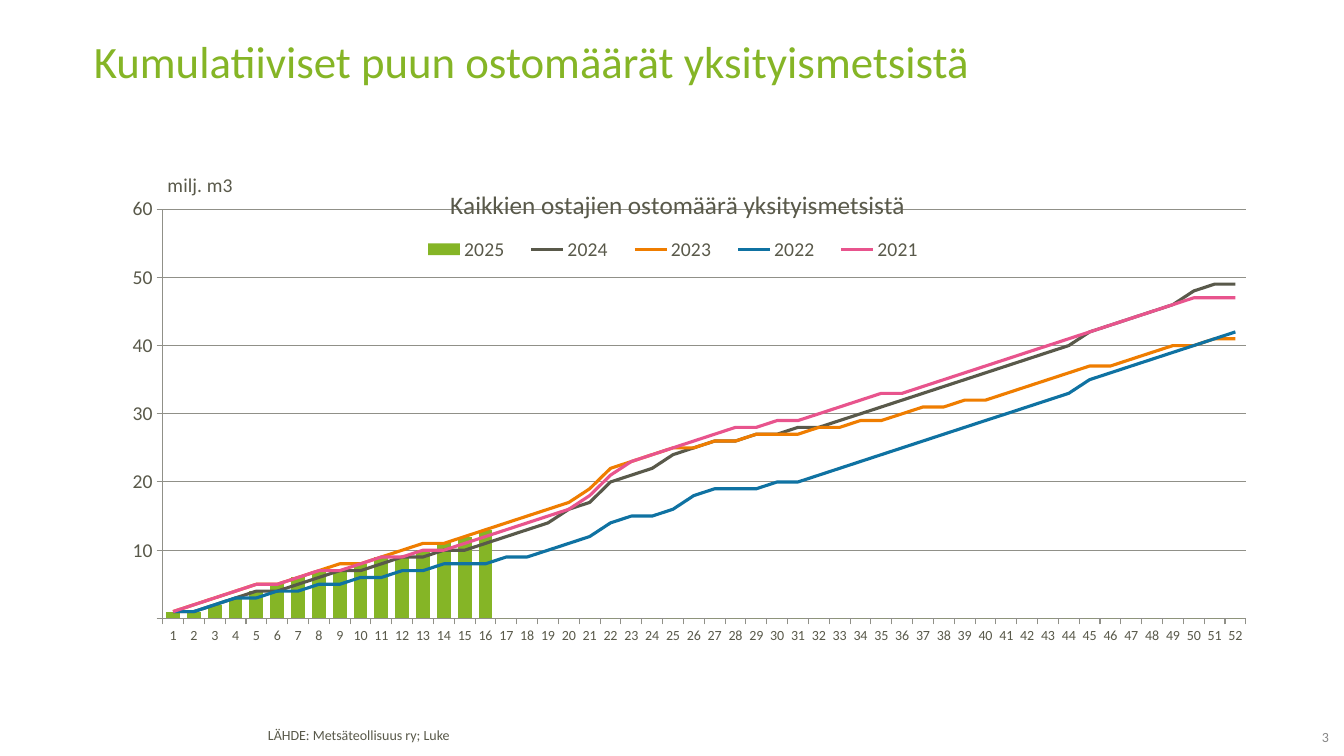
from lxml.etree import SubElement as Sub, Element as Elem
from pptx import Presentation
from pptx.chart.data import CategoryChartData as Data
from pptx.dml.color import RGBColor as RGB
from pptx.enum.chart import XL_CHART_TYPE as Kind, XL_LEGEND_POSITION as Spot
from pptx.enum.chart import XL_MARKER_STYLE as Mark, XL_TICK_MARK as Tick
from pptx.enum.text import MSO_ANCHOR as Anchor, PP_ALIGN as Align
from pptx.oxml.ns import qn
from pptx.util import Inches, Pt

FONT = "Calibri"
GREEN = RGB(0x85, 0xB5, 0x26)
DARK = RGB(0x59, 0x59, 0x4A)
ORANGE = RGB(0xEF, 0x7D, 0x00)
BLUE = RGB(0x0F, 0x72, 0xA2)
PINK = RGB(0xE8, 0x54, 0x8D)
GREY = RGB(0x87, 0x87, 0x87)
RULE = RGB(0x90, 0x90, 0x88)
WIDE, HIGH = Inches(13.33), Inches(7.5)
WEEKS = 52
MILLION = 1000000

YEARS = {
    "2025": (GREEN, [1, 1, 2, 3, 4, 5, 6, 7, 7, 8, 9, 9, 10, 11, 12, 13]),
    "2024": (DARK, [
        1, 1, 2, 3, 4, 4, 5, 6, 7, 7, 8, 9, 9, 10, 10, 11, 12, 13, 14, 16,
        17, 20, 21, 22, 24, 25, 26, 26, 27, 27, 28, 28, 29, 30, 31, 32, 33,
        34, 35, 36, 37, 38, 39, 40, 42, 43, 44, 45, 46, 48, 49, 49]),
    "2023": (ORANGE, [
        1, 2, 3, 4, 5, 5, 6, 7, 8, 8, 9, 10, 11, 11, 12, 13, 14, 15, 16, 17,
        19, 22, 23, 24, 25, 25, 26, 26, 27, 27, 27, 28, 28, 29, 29, 30, 31,
        31, 32, 32, 33, 34, 35, 36, 37, 37, 38, 39, 40, 40, 41, 41]),
    "2022": (BLUE, [
        1, 1, 2, 3, 3, 4, 4, 5, 5, 6, 6, 7, 7, 8, 8, 8, 9, 9, 10, 11,
        12, 14, 15, 15, 16, 18, 19, 19, 19, 20, 20, 21, 22, 23, 24, 25, 26,
        27, 28, 29, 30, 31, 32, 33, 35, 36, 37, 38, 39, 40, 41, 42]),
    "2021": (PINK, [
        1, 2, 3, 4, 5, 5, 6, 7, 7, 8, 9, 9, 10, 10, 11, 12, 13, 14, 15, 16,
        18, 21, 23, 24, 25, 26, 27, 28, 28, 29, 29, 30, 31, 32, 33, 33, 34,
        35, 36, 37, 38, 39, 40, 41, 42, 43, 44, 45, 46, 47, 47, 47]),
}


def area(x, y, w, h):
    return [int(side * part / 100)
            for side, part in zip((WIDE, HIGH, WIDE, HIGH), (x, y, w, h))]


def style(font, size, color):
    font.name, font.size, font.bold = FONT, Pt(size), False
    font.color.rgb = color


def write(frame, text, size, color, space=1.0):
    frame.text = text
    frame.word_wrap = True
    para = frame.paragraphs[0]
    para.line_spacing = space
    style(para.runs[0].font, size, color)
    return para


def add_title(slide, text):
    title = slide.shapes.title
    title.left, title.top, title.width, title.height = area(6.23, 5.2, 87.7, 13.07)
    title.text_frame.vertical_anchor = Anchor.TOP
    write(title.text_frame, text, 32, GREEN, 0.8).alignment = Align.LEFT


def add_note(slide, text, box, color, space=1.0):
    frame = slide.shapes.add_textbox(*area(*box)).text_frame
    return frame, write(frame, text, 10, color, space)


def place(node, index, x, y, w=None, h=None, inner=False):
    for old in node.findall(qn("c:layout")):
        node.remove(old)
    layout = Elem(qn("c:layout"))
    node.insert(index, layout)
    manual = Sub(layout, qn("c:manualLayout"))
    parts = [("layoutTarget", "inner")] if inner else []
    parts += [("xMode", "edge"), ("yMode", "edge")]
    parts += [(tag, str(share / 100))
              for tag, share in zip("xywh", (x, y, w, h)) if share is not None]
    for tag, val in parts:
        Sub(manual, qn("c:" + tag)).set("val", val)


def split(chart):
    bars = chart.plots[0]._element
    lines = Elem(qn("c:lineChart"))
    Sub(lines, qn("c:grouping")).set("val", "standard")
    Sub(lines, qn("c:varyColors")).set("val", "0")
    for ser in bars.findall(qn("c:ser"))[1:]:
        flip = ser.find(qn("c:invertIfNegative"))
        if flip is not None:
            ser.remove(flip)
        lines.append(ser)
    Sub(lines, qn("c:marker")).set("val", "1")
    for axis in bars.findall(qn("c:axId")):
        Sub(lines, qn("c:axId")).set("val", axis.get("val"))
    bars.addnext(lines)


def paint(chart):
    bars, lines = chart.plots
    bars.gap_width = 50
    bars.vary_by_categories = False
    fill = bars.series[0].format.fill
    fill.solid()
    fill.fore_color.rgb = GREEN
    for ser in lines.series:
        ser.smooth = False
        ser.marker.style = Mark.NONE
        ser.format.line.width = Pt(2.25)
        ser.format.line.color.rgb = YEARS[ser.name][0]


def set_axes(chart):
    weeks, volume = chart.category_axis, chart.value_axis
    for axis, size in ((weeks, 10), (volume, 14)):
        axis.major_tick_mark, axis.minor_tick_mark = Tick.OUTSIDE, Tick.NONE
        axis.format.line.color.rgb = RULE
        style(axis.tick_labels.font, size, DARK)
    volume.minimum_scale, volume.maximum_scale = 0, 60 * MILLION
    volume.major_unit = 10 * MILLION
    volume.has_major_gridlines = True
    volume.major_gridlines.format.line.color.rgb = RULE
    volume.tick_labels.number_format = "#,,"
    volume.tick_labels.number_format_is_linked = False
    unit = volume.axis_title
    write(unit.text_frame, "milj. m3", 14, DARK)
    body = unit._element.find(".//" + qn("a:bodyPr"))
    body.set("rot", "0")
    body.set("vert", "horz")
    place(unit._element, 1, 6.8, 1.9)


def add_graph(slide):
    data = Data(number_format="0")
    data.categories = [str(week + 1) for week in range(WEEKS)]
    for name, (_, vals) in YEARS.items():
        full = vals + [0] * (WEEKS - len(vals))
        data.add_series(name, [val * MILLION for val in full])
    box = area(6.23, 20.93, 87.7, 68.8)
    chart = slide.shapes.add_chart(Kind.COLUMN_CLUSTERED, *box, data).chart
    style(chart.font, 10, DARK)
    split(chart)
    paint(chart)
    set_axes(chart)
    chart.has_title = True
    write(chart.chart_title.text_frame,
          "Kaikkien ostajien ostomäärä yksityismetsistä", 18, DARK)
    place(chart.chart_title._element, 1, 30.7, 4.8)
    chart.has_legend = True
    chart.legend.position = Spot.RIGHT
    chart.legend.include_in_layout = False
    style(chart.legend.font, 14, DARK)
    place(chart.legend._element, 1, 27.5, 14, 45, 7)
    plot = chart._chartSpace.find(".//" + qn("c:plotArea"))
    place(plot, 0, 6.7, 9.8, 91.9, 78.7, True)


def main():
    deck = Presentation()
    deck.slide_width, deck.slide_height = WIDE, HIGH
    slide = deck.slides.add_slide(deck.slide_layouts[5])
    add_title(slide, "Kumulatiiviset puun ostomäärät yksityismetsistä")
    add_graph(slide)
    add_note(slide, "LÄHDE: Metsäteollisuus ry; Luke",
             (19.2, 95.73, 53.86, 3.6), DARK, 0.85)
    frame, para = add_note(slide, "3", (94.9, 96.53, 3.98, 2.53), GREY)
    frame.margin_left = frame.margin_right = frame.margin_top = 0
    frame.margin_bottom = Inches(0.04)
    frame.vertical_anchor = Anchor.MIDDLE
    para.alignment = Align.RIGHT
    deck.save("out.pptx")


if __name__ == "__main__":
    main()
